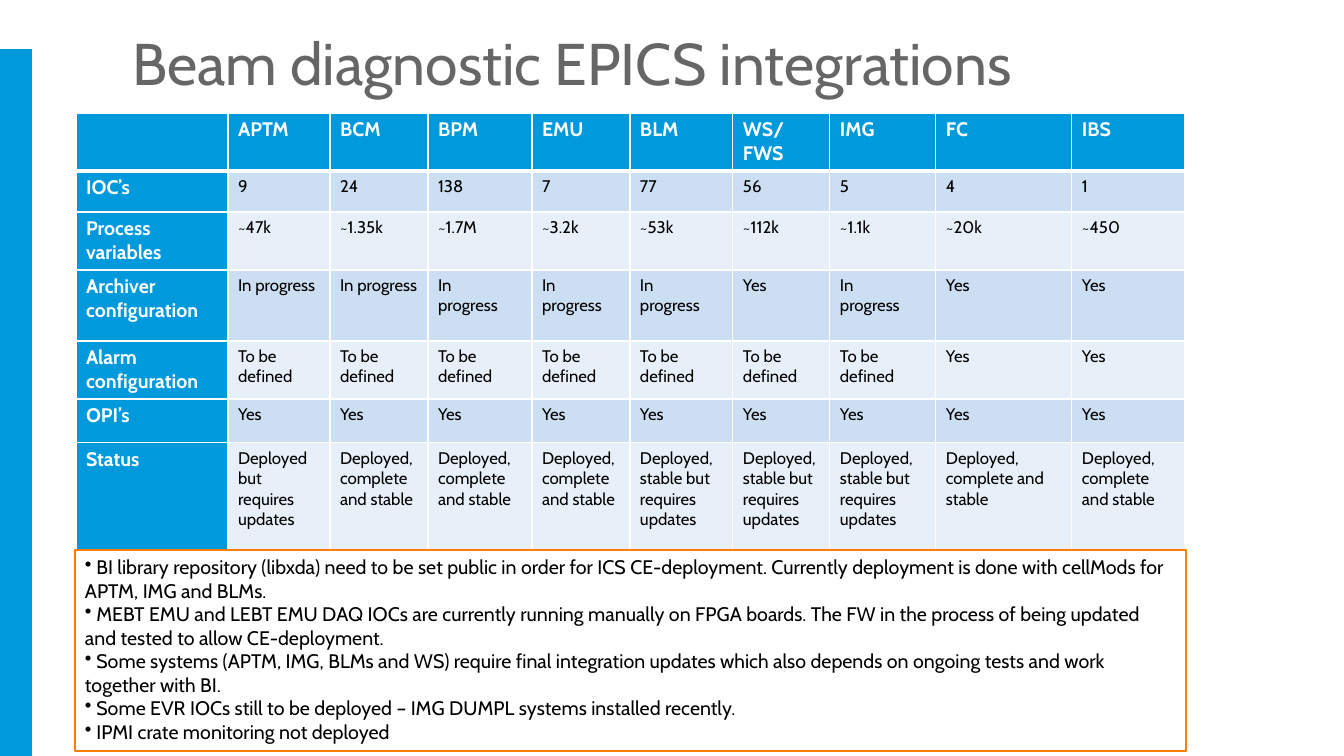
from itertools import pairwise

from lxml import etree
from pptx import Presentation
from pptx import util as u
from pptx.dml.color import RGBColor
from pptx.enum import shapes, text
from pptx.oxml.ns import qn

EMU_PER_PX = 914400 / 100.8
FONT = "Cabin"
BLUE, GREY, ORANGE = "0099DC", "666666", "FF7D00"
WHITE, BLACK = "FFFFFF", "000000"
BANDS = "CCDEF2", "E7EFF9"

COLUMN_EDGES = [76, 228, 330, 428, 532, 630, 733, 830, 936, 1072, 1185]
ROW_EDGES = [113, 171, 212, 270, 341, 399, 443, 550]

YES, TO_DEFINE = "Yes", "To be defined"
IN_PROGRESS, IN_PROGRESS_SPLIT = "In progress", "In\nprogress"
STABLE = "Deployed, complete and stable"
STABLE_UPDATES = "Deployed, stable but requires updates"
ROWS = [
    ["", "APTM", "BCM", "BPM", "EMU", "BLM", "WS/FWS", "IMG", "FC", "IBS"],
    ["IOC’s", "9", "24", "138", "7", "77", "56", "5", "4", "1"],
    ["Process variables", "~47k", "~1.35k", "~1.7M", "~3.2k", "~53k",
     "~112k", "~1.1k", "~20k", "~450"],
    ["Archiver configuration", *[IN_PROGRESS] * 2, *[IN_PROGRESS_SPLIT] * 3,
     YES, IN_PROGRESS_SPLIT, YES, YES],
    ["Alarm configuration", *[TO_DEFINE] * 7, YES, YES],
    ["OPI’s", *[YES] * 9],
    ["Status", "Deployed but requires updates", *[STABLE] * 3,
     *[STABLE_UPDATES] * 3, *[STABLE] * 2],
]
NOTES = [
    "BI library repository (libxda) need to be set public in order for ICS "
    "CE-deployment. Currently deployment is done with cellMods for APTM, IMG and BLMs.",
    "MEBT EMU and LEBT EMU DAQ IOCs are currently running manually on FPGA boards. "
    "The FW in the process of being updated and tested to allow CE-deployment.",
    "Some systems (APTM, IMG, BLMs and WS) require final integration updates which "
    "also depends on ongoing tests and work together with BI.",
    "Some EVR IOCs still to be deployed – IMG DUMPL systems installed recently.",
    "IPMI crate monitoring not deployed",
]


def px(n):
    return u.Emu(round(n * EMU_PER_PX))


def rgb(color):
    return RGBColor.from_string(color)


def add_run(p, words, size, color, bold=False):
    r = p.add_run()
    r.text = words
    r.font.name, r.font.size, r.font.bold = FONT, u.Pt(size), bold
    r.font.color.rgb = rgb(color)


def next_paragraph(tf, index):
    return tf.add_paragraph() if index else tf.paragraphs[0]


def add_box(s, left, top, width, height, fill, line=None):
    sp = s.shapes.add_shape(shapes.MSO_SHAPE.RECTANGLE,
                            px(left), px(top), px(width), px(height))
    sp.shadow.inherit = False
    sp.fill.solid()
    sp.fill.fore_color.rgb = rgb(fill)
    if line:
        sp.line.color.rgb = rgb(line)
        sp.line.width = u.Pt(1)
    else:
        sp.line.fill.background()
    return sp


def set_title(s, words):
    title = s.shapes.title
    title.left, title.top, title.width, title.height = map(px, (122, 29, 1032, 73))
    tf = title.text_frame
    tf.margin_bottom = u.Pt(1.5)
    tf.vertical_anchor = text.MSO_ANCHOR.MIDDLE
    p = tf.paragraphs[0]
    p.alignment = text.PP_ALIGN.LEFT
    p.line_spacing = 0.9
    add_run(p, words, 42, GREY)


def add_borders(cell, bottom):
    """Draw white cell edges, 1 pt but for the bottom one."""
    tc_pr = cell._tc.get_or_add_tcPr()
    for side, points in {"L": 1, "R": 1, "T": 1, "B": bottom}.items():
        ln = etree.SubElement(tc_pr, qn(f"a:ln{side}"), w=str(u.Pt(points)))
        fill = etree.SubElement(ln, qn("a:solidFill"))
        etree.SubElement(fill, qn("a:srgbClr"), val=WHITE)


def fill_cell(cell, words, row, column):
    heading = row == 0 or column == 0
    add_borders(cell, 3 if row == 0 else 1)
    cell.fill.solid()
    cell.fill.fore_color.rgb = rgb(BLUE if heading else BANDS[(row - 1) % 2])
    style = (14, WHITE, True) if heading else (12, BLACK)
    for i, line in enumerate(words.splitlines()):
        add_run(next_paragraph(cell.text_frame, i), line, *style)


def add_status_table(s):
    left, top = COLUMN_EDGES[0], ROW_EDGES[0]
    table = s.shapes.add_table(
        len(ROWS), len(ROWS[0]), px(left), px(top),
        px(COLUMN_EDGES[-1] - left), px(ROW_EDGES[-1] - top)).table
    for column, (start, end) in zip(table.columns, pairwise(COLUMN_EDGES)):
        column.width = px(end - start)
    for row, (start, end) in zip(table.rows, pairwise(ROW_EDGES)):
        row.height = px(end - start)
    for i, row in enumerate(ROWS):
        for j, words in enumerate(row):
            fill_cell(table.cell(i, j), words, i, j)


def add_notes_box(s):
    tf = add_box(s, 75, 550, 1111, 201, WHITE, ORANGE).text_frame
    tf.word_wrap = True
    tf.vertical_anchor = text.MSO_ANCHOR.TOP
    for i, note in enumerate(NOTES):
        p = next_paragraph(tf, i)
        p.alignment = text.PP_ALIGN.LEFT
        p_pr = p._p.get_or_add_pPr()
        p_pr.set("marL", "0")
        p_pr.set("indent", "0")
        etree.SubElement(p_pr, qn("a:buChar"), char="•")
        add_run(p, " " + note, 14, BLACK)


def main():
    prs = Presentation()
    prs.slide_width, prs.slide_height = px(1344), px(756)
    s = prs.slides.add_slide(prs.slide_layouts[5])
    add_box(s, 0, 49, 32, 707, BLUE)
    set_title(s, "Beam diagnostic EPICS integrations")
    add_status_table(s)
    add_notes_box(s)
    prs.save("out.pptx")


if __name__ == "__main__":
    main()
